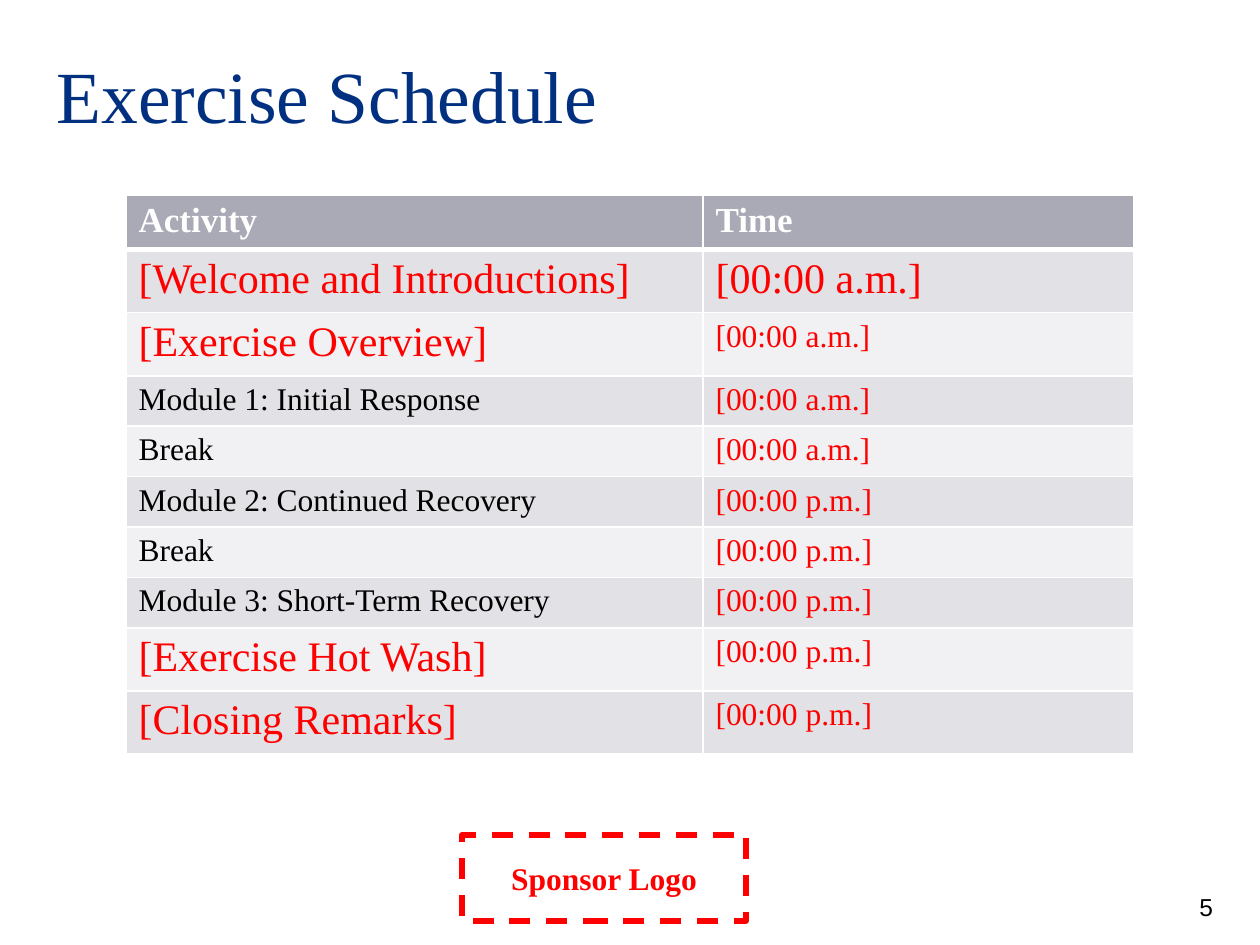
"""Build the exercise schedule slide with its table and sponsor box."""
from lxml.etree import SubElement
from pptx import Presentation
from pptx.dml.color import RGBColor
from pptx.enum.dml import MSO_LINE
from pptx.enum.shapes import MSO_SHAPE
from pptx.enum.text import MSO_ANCHOR, PP_ALIGN
from pptx.oxml.ns import qn
from pptx.util import Pt

PX = 914400 // 126
SERIF = "Times New Roman"
COLORS = {
    "title": "00307F",
    "header": "AAAAB7",
    "odd": "E2E2E6",
    "even": "F1F1F3",
    "white": "FFFFFF",
    "red": "FF0000",
    "black": "000000",
}
SCHEDULE = [
    ("[Welcome and Introductions]", "[00:00 a.m.]", 24),
    ("[Exercise Overview]", "[00:00 a.m.]", 18),
    ("Module 1: Initial Response", "[00:00 a.m.]", 18),
    ("Break", "[00:00 a.m.]", 18),
    ("Module 2: Continued Recovery", "[00:00 p.m.]", 18),
    ("Break", "[00:00 p.m.]", 18),
    ("Module 3: Short-Term Recovery", "[00:00 p.m.]", 18),
    ("[Exercise Hot Wash]", "[00:00 p.m.]", 18),
    ("[Closing Remarks]", "[00:00 p.m.]", 18),
]


def write(frame, text, size, color, bold=False, name=SERIF, align=PP_ALIGN.LEFT):
    frame.text = text
    paragraph = frame.paragraphs[0]
    paragraph.alignment = align
    font = paragraph.font
    font.name, font.size, font.bold = name, Pt(size), bold
    font.color.rgb = RGBColor.from_string(COLORS[color])
    return paragraph


def format_cell(cell, fill, bottom, top):
    properties = cell._tc.get_or_add_tcPr()
    for side, width in (("L", 1), ("R", 1), ("T", top), ("B", bottom)):
        line = SubElement(properties, qn(f"a:ln{side}"), w=str(Pt(width)))
        solid = SubElement(line, qn("a:solidFill"))
        SubElement(solid, qn("a:srgbClr"), val=COLORS["white"])
    cell.fill.solid()
    cell.fill.fore_color.rgb = RGBColor.from_string(COLORS[fill])


presentation = Presentation()
presentation.slide_width = 1260 * PX
presentation.slide_height = 945 * PX
slide = presentation.slides.add_slide(presentation.slide_layouts[5])

sponsor = slide.shapes.add_shape(
    MSO_SHAPE.RECTANGLE, 462 * PX, 835 * PX, 284 * PX, 86 * PX
)
sponsor.shadow.inherit = False
sponsor.fill.background()
sponsor.line.color.rgb = RGBColor.from_string(COLORS["red"])
sponsor.line.width = Pt(3)
sponsor.line.dash_style = MSO_LINE.DASH
sponsor.text_frame.vertical_anchor = MSO_ANCHOR.MIDDLE
write(sponsor.text_frame, "Sponsor Logo", 18, "red", bold=True, align=PP_ALIGN.CENTER)

number = slide.shapes.add_textbox(1187 * PX, 886 * PX, 63 * PX, 35 * PX)
number.text_frame.word_wrap = True
write(number.text_frame, "5", 14, "black", name="Arial")

table = slide.shapes.add_table(
    len(SCHEDULE) + 1, 2, 126 * PX, 195 * PX, 1008 * PX, 508 * PX
).table
table.columns[0].width = 577 * PX
table.columns[1].width = 431 * PX
table.rows[0].height = 51 * PX

for column, heading in enumerate(("Activity", "Time")):
    cell = table.cell(0, column)
    write(cell.text_frame, heading, 20, "white", bold=True)
    format_cell(cell, "header", bottom=3, top=1)

for row, (activity, time, time_size) in enumerate(SCHEDULE, start=1):
    placeholder = activity.startswith("[")
    table.rows[row].height = (59 if placeholder else 47) * PX
    entries = (
        (activity, 24 if placeholder else 18, "red" if placeholder else "black"),
        (time, time_size, "red"),
    )
    for column, (text, size, color) in enumerate(entries):
        cell = table.cell(row, column)
        paragraph = write(cell.text_frame, text, size, color)
        paragraph.space_after = Pt(6)
        format_cell(cell, "odd" if row % 2 else "even", 1, 3 if row == 1 else 1)

title = slide.shapes.title
title.left, title.top = 44 * PX, 0
title.width, title.height = 1029 * PX, 145 * PX
title.text_frame.vertical_anchor = MSO_ANCHOR.BOTTOM
write(title.text_frame, "Exercise Schedule", 42, "title")

presentation.save("out.pptx")
